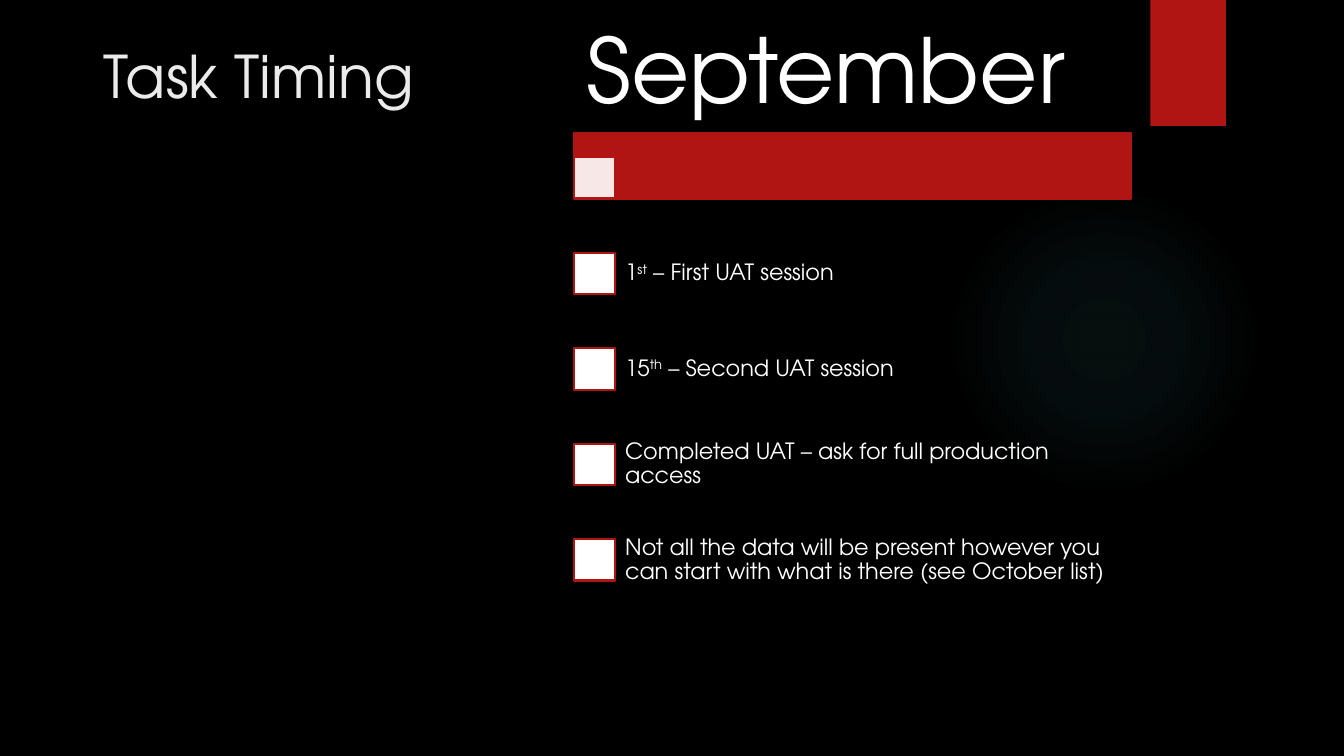
from lxml.etree import SubElement
from pptx import Presentation
from pptx.dml.color import RGBColor
from pptx.enum.shapes import MSO_SHAPE
from pptx.enum.text import MSO_ANCHOR, PP_ALIGN
from pptx.oxml import parse_xml
from pptx.oxml.ns import nsdecls, qn
from pptx.util import Inches, Pt

BLACK = RGBColor(0, 0, 0)
RED = RGBColor(0xB0, 0x15, 0x13)
WHITE = RGBColor(0xFF, 0xFF, 0xFF)
PALE = RGBColor(0xEB, 0xEB, 0xEB)
TEAL = RGBColor(0x50, 0xB9, 0xC1)
FONT = "TeX Gyre Adventor"
BOX = 0.41
STEP = 0.947

# Each task is a list of (text, raised) runs.
TASKS = [
    [("1", False), ("st", True), (" – First UAT session", False)],
    [("15", False), ("th", True), (" – Second UAT session", False)],
    [("Completed UAT – ask for full production access", False)],
    [("Not all the data will be present however you can start with "
      "what is there (see October list)", False)],
]


def write(shape, runs, size, color=WHITE, anchor=MSO_ANCHOR.MIDDLE,
          inset=(0.1, 0.05), spacing=0.9):
    """Fill a shape with one left-aligned paragraph of (text, raised) runs."""
    frame = shape.text_frame
    frame.word_wrap = True
    frame.vertical_anchor = anchor
    frame.margin_left = frame.margin_right = Inches(inset[0])
    frame.margin_top = frame.margin_bottom = Inches(inset[1])
    para = frame.paragraphs[0]
    para.alignment = PP_ALIGN.LEFT
    para.line_spacing = spacing
    for text, raised in runs:
        run = para.add_run()
        run.text = text
        run.font.name = FONT
        run.font.size = Pt(size)
        run.font.color.rgb = color
        if raised:
            run.font._element.set("baseline", "30000")


def add_rect(slide, x, y, w, h, fill, line=RED, alpha=None):
    rect = slide.shapes.add_shape(
        MSO_SHAPE.RECTANGLE, Inches(x), Inches(y), Inches(w), Inches(h))
    rect.shadow.inherit = False
    rect.fill.solid()
    rect.fill.fore_color.rgb = fill
    if line is None:
        rect.line.fill.background()
    else:
        rect.line.color.rgb = line
        rect.line.width = Pt(1.5)
    if alpha:
        tone = rect._element.spPr.find(qn("a:solidFill"))[0]
        SubElement(tone, qn("a:alpha")).set("val", str(alpha * 1000))


def add_text(slide, x, y, w, h, runs, size, **style):
    box = slide.shapes.add_textbox(Inches(x), Inches(y), Inches(w), Inches(h))
    write(box, runs, size, **style)


def add_glow(slide, x, y, size):
    """Draw a faint round light that fades out from its centre."""
    glow = slide.shapes.add_shape(
        MSO_SHAPE.OVAL, Inches(x), Inches(y), Inches(size), Inches(size))
    glow.shadow.inherit = False
    glow.line.fill.background()
    stops = "".join(
        f'<a:gs pos="{pos * 1000}"><a:srgbClr val="{TEAL}">'
        f'<a:alpha val="{alpha * 1000}"/></a:srgbClr></a:gs>'
        for pos, alpha in [(0, 7), (36, 6), (69, 0)])
    fill = parse_xml(
        f'<a:gradFill {nsdecls("a")}><a:gsLst>{stops}</a:gsLst>'
        '<a:path path="circle"><a:fillToRect l="50000" t="50000" '
        'r="50000" b="50000"/></a:path></a:gradFill>')
    glow._element.spPr.find(qn("a:prstGeom")).addnext(fill)


def add_decor(slide):
    slide.background.fill.solid()
    slide.background.fill.fore_color.rgb = BLACK
    add_glow(slide, 9.41, 1.83, 3.08)
    add_rect(slide, 11.41, 0, 0.75, 1.25, RED, line=None)


def add_title(slide, x, y, w, h):
    title = slide.shapes.title
    title.left, title.top = Inches(x), Inches(y)
    title.width, title.height = Inches(w), Inches(h)
    write(title, [("Task Timing", False)], 42, color=PALE,
          anchor=MSO_ANCHOR.TOP, spacing=1)


def add_month(slide, x, y, w, name, tasks):
    """Place a month heading, its bar and a check box for each task."""
    add_rect(slide, x, y + 1.17, w, 0.65, RED)
    add_rect(slide, x, y + 1.41, BOX, BOX, WHITE, alpha=90)
    add_text(slide, x, y, w, 1.17, [(name, False)], 64, inset=(0.13, 0.09))
    for i, runs in enumerate(tasks):
        top = y + 2.09 + i * STEP
        add_rect(slide, x, top + (STEP - BOX) / 2, BOX, BOX, WHITE)
        add_text(slide, x + 0.39, top, w - 0.39, STEP, runs, 16,
                 inset=(0.12, 0.12))


def main():
    deck = Presentation()
    deck.slide_width, deck.slide_height = Inches(13.33), Inches(7.5)
    slide = deck.slides.add_slide(deck.slide_layouts[5])
    add_decor(slide)
    add_title(slide, 0.93, 0.34, 11.5, 1.45)
    add_month(slide, 5.69, 0.15, 5.53, "September", TASKS)
    deck.save("out.pptx")


if __name__ == "__main__":
    main()
